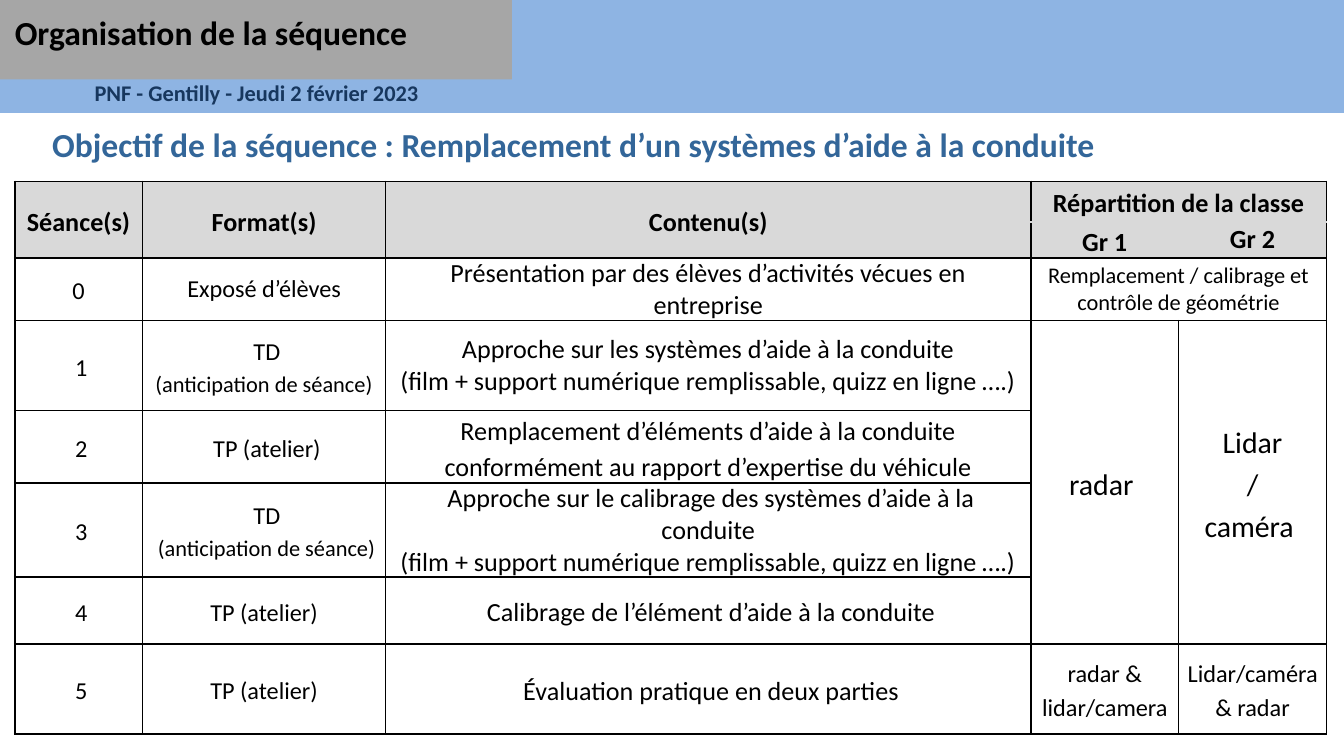
from lxml.etree import SubElement
from pptx import Presentation
from pptx.dml.color import RGBColor
from pptx.enum.shapes import MSO_SHAPE as Shape
from pptx.enum.text import MSO_ANCHOR as Anchor, PP_ALIGN as Align
from pptx.oxml.ns import qn
from pptx.util import Inches, Pt

BLACK = RGBColor(0x00, 0x00, 0x00)
BAND_BLUE = RGBColor(0x8E, 0xB4, 0xE3)
TITLE_GREY = RGBColor(0xA6, 0xA6, 0xA6)
DATE_NAVY = RGBColor(0x17, 0x37, 0x5E)
GOAL_BLUE = RGBColor(0x33, 0x66, 0x99)
HEADER_GREY = RGBColor(0xD9, 0xD9, 0xD9)
WHITE = RGBColor(0xFF, 0xFF, 0xFF)

PAGE_WIDTH = 10
PAGE_HEIGHT = PAGE_WIDTH * 9 / 16
COLUMNS = [0.95, 1.81, 4.8, 1.1, 1.1]
ROWS = [0.3, 0.26, 0.45, 0.67, 0.53, 0.67, 0.5, 0.67]
SIZES = [13, 13, 14, 13, 13]
HEADER_ROWS = 2
MERGES = [(0, 0, 1, 0), (0, 1, 1, 1), (0, 2, 1, 2), (0, 3, 0, 4),
          (2, 3, 2, 4), (3, 3, 6, 3), (3, 4, 6, 4)]
FILM = "(film + support numérique remplissable, quizz en ligne ….)"
EARLY = "(anticipation de séance)"
SESSIONS = [
    ["Séance(s)", "Format(s)", "Contenu(s)", "Répartition de la classe", ""],
    ["", "", "", "Gr 1", "Gr 2"],
    ["0", "Exposé d’élèves", "Présentation par des élèves d’activités vécues en entreprise",
     "Remplacement / calibrage et contrôle de géométrie", ""],
    [" 1", f" TD\n{EARLY}", f"Approche sur les systèmes d’aide à la conduite\n{FILM}",
     "radar ", "Lidar\n/\ncaméra "],
    [" 2", " TP (atelier)", "Remplacement d’éléments d’aide à la conduite "
     "conformément au rapport d’expertise du véhicule", "", ""],
    [" 3", f" TD\n {EARLY}",
     f" Approche sur le calibrage des systèmes d’aide à la conduite\n{FILM}", "", ""],
    [" 4", "TP (atelier)", " Calibrage de l’élément d’aide à la conduite", "", ""],
    [" 5", "TP (atelier)", " Évaluation pratique en deux parties",
     "radar & lidar/camera", "Lidar/caméra & radar"],
]
SPECIAL_SIZES = {(2, 3): 12, (3, 3): 16, (3, 4): 16}
SINGLE_SPACED = {(1, 4), (2, 1), (2, 2), (2, 3), (3, 2), (5, 2)}
GREY_EDGES = {(0, 3): "B", (0, 4): "B", (1, 3): "TR", (1, 4): "LT"}


def style_font(font, size, color, bold):
    font.name = "Calibri"
    font.size = Pt(size)
    font.bold = bold
    font.color.rgb = color


def place(shape, left, top, width, height):
    shape.left, shape.top = Inches(left), Inches(top)
    shape.width, shape.height = Inches(width), Inches(height)


def write_line(shape, text, size, color, align=Align.LEFT):
    frame = shape.text_frame
    frame.word_wrap = True
    frame.vertical_anchor = Anchor.TOP
    para = frame.paragraphs[0]
    para.text = text
    para.alignment = align
    style_font(para.font, size, color, True)


def add_band(page, left, top, width, height, color):
    band = page.shapes.add_shape(Shape.RECTANGLE, Inches(left), Inches(top),
                                 Inches(width), Inches(height))
    band.shadow.inherit = False
    band.fill.solid()
    band.fill.fore_color.rgb = color
    band.line.fill.background()


def add_text(page, left, top, width, height, *line):
    box = page.shapes.add_textbox(Inches(left), Inches(top), Inches(width), Inches(height))
    write_line(box, *line)


def add_banner(page, left, top, width):
    add_band(page, left, top, width, 0.84, BAND_BLUE)
    add_band(page, left, top, 3.81, 0.59, TITLE_GREY)
    add_text(page, left, top + 0.54, 3.82, 0.3,
             "PNF - Gentilly - Jeudi 2 février 2023", 12, DATE_NAVY, Align.CENTER)
    title = page.shapes.title
    place(title, left + 0.01, top + 0.04, 3.84, 0.59)
    write_line(title, "Organisation de la séquence", 18, BLACK)
    page.shapes._spTree.append(title._element)


def set_borders(cell, grey_edges):
    properties = cell._tc.get_or_add_tcPr()
    for index, edge in enumerate("LRTB"):
        color = HEADER_GREY if edge in grey_edges else BLACK
        line = SubElement(properties, qn(f"a:ln{edge}"), w=str(Pt(1)))
        fill = SubElement(line, qn("a:solidFill"))
        SubElement(fill, qn("a:srgbClr"), val=str(color))
        properties.insert(index, line)


def fill_cell(cell, row, column, text):
    header = row < HEADER_ROWS
    cell.fill.solid()
    cell.fill.fore_color.rgb = HEADER_GREY if header else WHITE
    set_borders(cell, GREY_EDGES.get((row, column), ""))
    cell.vertical_anchor = Anchor.MIDDLE
    cell.margin_left = cell.margin_right = Inches(0.06 if header or column > 2 else 0.07)
    cell.margin_top = cell.margin_bottom = 0
    if not text:
        return
    cell.text = text
    size = 14 if header else SPECIAL_SIZES.get((row, column), SIZES[column])
    for para in cell.text_frame.paragraphs:
        para.alignment = Align.CENTER
        para.line_spacing = 1.0 if (row, column) in SINGLE_SPACED else 1.15
        style_font(para.font, 12 if EARLY in para.text else size, BLACK, header)


def add_schedule(page, left, top, width, height):
    table = page.shapes.add_table(len(ROWS), len(COLUMNS), Inches(left), Inches(top),
                                  Inches(width), Inches(height)).table
    table.first_row = table.horz_banding = False
    for column, size in zip(table.columns, COLUMNS):
        column.width = Inches(size)
    for row, size in zip(table.rows, ROWS):
        row.height = Inches(size)
    for first_row, first_column, last_row, last_column in MERGES:
        table.cell(first_row, first_column).merge(table.cell(last_row, last_column))
    for row, texts in enumerate(SESSIONS):
        for column, text in enumerate(texts):
            fill_cell(table.cell(row, column), row, column, text)


def main():
    deck = Presentation()
    deck.slide_width, deck.slide_height = Inches(PAGE_WIDTH), Inches(PAGE_HEIGHT)
    page = deck.slides.add_slide(deck.slide_layouts[5])
    add_banner(page, 0, 0, PAGE_WIDTH)
    add_text(page, 0.29, 0.87, 8.7, 0.4,
             "Objectif de la séquence : Remplacement d’un systèmes d’aide à la conduite",
             18, GOAL_BLUE)
    add_schedule(page, 0.11, 1.35, sum(COLUMNS), sum(ROWS))
    deck.save("out.pptx")


if __name__ == "__main__":
    main()
